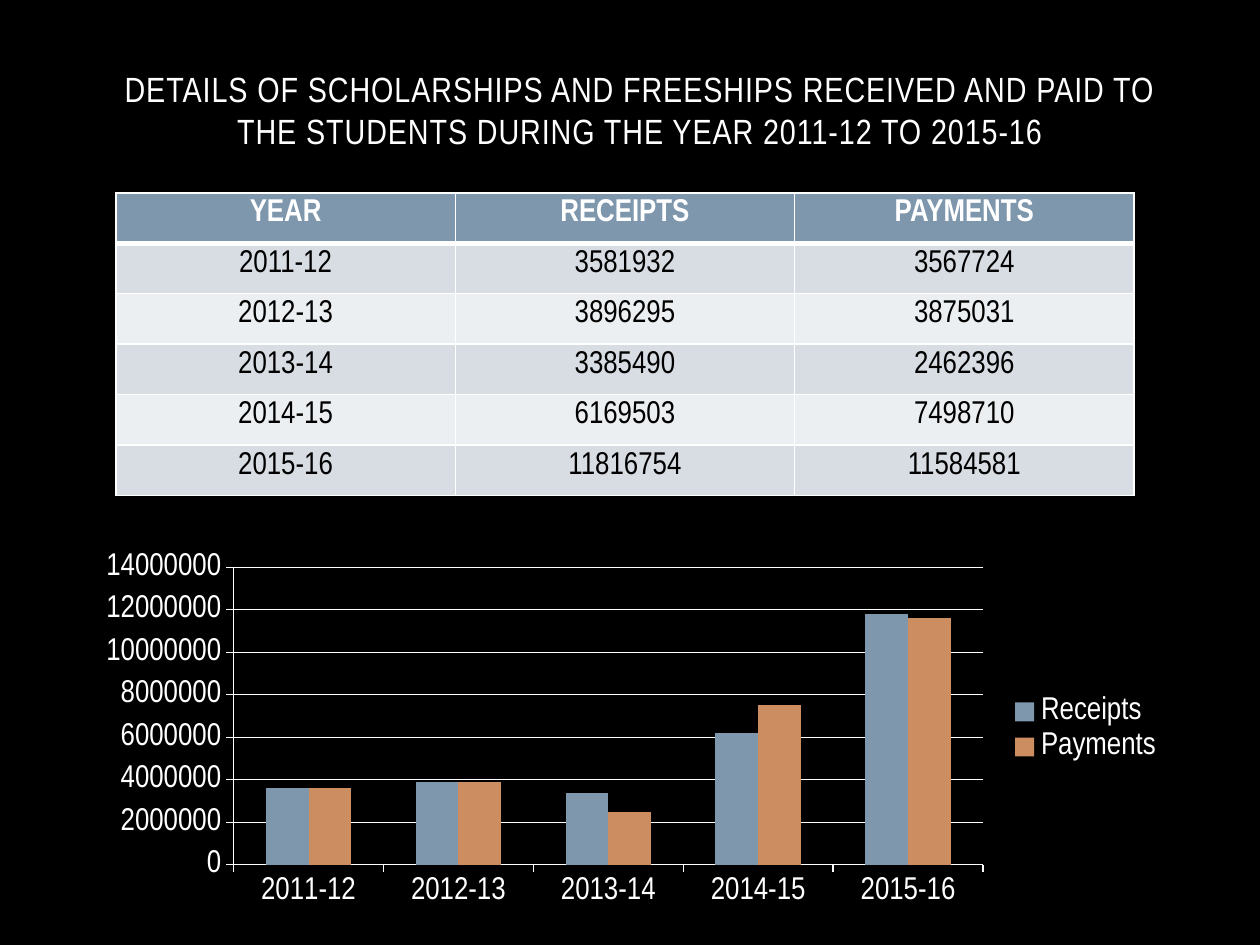
from dataclasses import dataclass

from lxml import etree
from pptx import Presentation
from pptx.chart import data as chart_data
from pptx.dml.color import RGBColor
from pptx.enum import chart as chart_enum, text
from pptx.oxml import ns
from pptx.util import Inches, Pt


@dataclass(frozen=True)
class Theme:
    font: str = "Arial Narrow"
    title_size: int = 20
    body_size: int = 18
    black: RGBColor = RGBColor.from_string("000000")
    white: RGBColor = RGBColor.from_string("FFFFFF")
    blue: RGBColor = RGBColor.from_string("7E97AD")
    orange: RGBColor = RGBColor.from_string("CC8E60")
    dark_band: RGBColor = RGBColor.from_string("D8DDE3")
    light_band: RGBColor = RGBColor.from_string("ECEFF1")


theme = Theme()
headings = ["YEAR", "RECEIPTS", "PAYMENTS"]
years = ["2011-12", "2012-13", "2013-14", "2014-15", "2015-16"]
receipts = [3581932, 3896295, 3385490, 6169503, 11816754]
payments = [3567724, 3875031, 2462396, 7498710, 11584581]


def style_font(font, size, color, bold=False):
    font.name = theme.font
    font.size = Pt(size)
    font.bold = bold
    font.color.rgb = color


def add_borders(cell, bottom_width):
    """Draw white cell borders; they must precede the fill in tcPr."""
    properties = cell._tc.get_or_add_tcPr()
    for index, side in enumerate(("lnL", "lnR", "lnT", "lnB")):
        width = bottom_width if side == "lnB" else 1
        border = etree.Element(ns.qn(f"a:{side}"), w=str(Pt(width)))
        fill = etree.SubElement(border, ns.qn("a:solidFill"))
        etree.SubElement(fill, ns.qn("a:srgbClr"), val=str(theme.white))
        properties.insert(index, border)


presentation = Presentation()
presentation.slide_width = Inches(10)
presentation.slide_height = Inches(7.5)
slide = presentation.slides.add_slide(presentation.slide_layouts[6])
slide.background.fill.solid()
slide.background.fill.fore_color.rgb = theme.black

# Title
title = slide.shapes.add_textbox(Inches(0.83), Inches(0.25), Inches(8.5), Inches(1))
title_frame = title.text_frame
title_frame.word_wrap = True
title_frame.vertical_anchor = text.MSO_ANCHOR.BOTTOM
heading = title_frame.paragraphs[0]
heading.alignment = text.PP_ALIGN.CENTER
heading_run = heading.add_run()
heading_run.text = (
    "DETAILS OF SCHOLARSHIPS AND FREESHIPS RECEIVED AND PAID TO "
    "THE STUDENTS DURING THE YEAR 2011-12 TO 2015-16"
)
style_font(heading_run.font, theme.title_size, theme.white)
heading_run.font._element.set("spc", "50")

# Chart, plotted to the nearest hundred thousand
amounts = chart_data.CategoryChartData()
amounts.categories = years
amounts.add_series("Receipts", [round(value, -5) for value in receipts])
amounts.add_series("Payments", [round(value, -5) for value in payments])
chart = slide.shapes.add_chart(
    chart_enum.XL_CHART_TYPE.COLUMN_CLUSTERED,
    Inches(0.67), Inches(4.33), Inches(8.67), Inches(2.92), amounts,
).chart
style_font(chart.font, theme.body_size, theme.white)
chart.has_title = False
chart.has_legend = True
chart.legend.position = chart_enum.XL_LEGEND_POSITION.RIGHT
chart.legend.include_in_layout = False

plot = chart.plots[0]
plot.gap_width = 150
plot.overlap = 0
plot.vary_by_categories = False
for series, color in zip(plot.series, (theme.blue, theme.orange)):
    series.format.fill.solid()
    series.format.fill.fore_color.rgb = color

amount_axis = chart.value_axis
amount_axis.minimum_scale = 0
amount_axis.maximum_scale = 14000000
amount_axis.major_unit = 2000000
amount_axis.has_major_gridlines = True
for axis in (chart.category_axis, amount_axis):
    axis.major_tick_mark = chart_enum.XL_TICK_MARK.OUTSIDE
    axis.tick_labels.number_format = "General"
    axis.tick_labels.number_format_is_linked = False
for line in (
    chart.category_axis.format.line,
    amount_axis.format.line,
    amount_axis.major_gridlines.format.line,
):
    line.color.rgb = theme.white
    line.width = Pt(0.75)

# Table
rows = [headings, *zip(years, receipts, payments)]
table = slide.shapes.add_table(
    len(rows), len(headings),
    Inches(0.92), Inches(1.53), Inches(8.08), Inches(2.4),
).table
for row_index, row in enumerate(rows):
    is_header = row_index == 0
    band = theme.dark_band if row_index % 2 else theme.light_band
    for column_index, value in enumerate(row):
        cell = table.cell(row_index, column_index)
        cell.text = str(value)
        cell.fill.solid()
        cell.fill.fore_color.rgb = theme.blue if is_header else band
        add_borders(cell, bottom_width=3 if is_header else 1)
        entry = cell.text_frame.paragraphs[0]
        entry.alignment = text.PP_ALIGN.CENTER
        style_font(
            entry.font, theme.body_size,
            theme.white if is_header else theme.black, bold=is_header,
        )

presentation.save("out.pptx")
